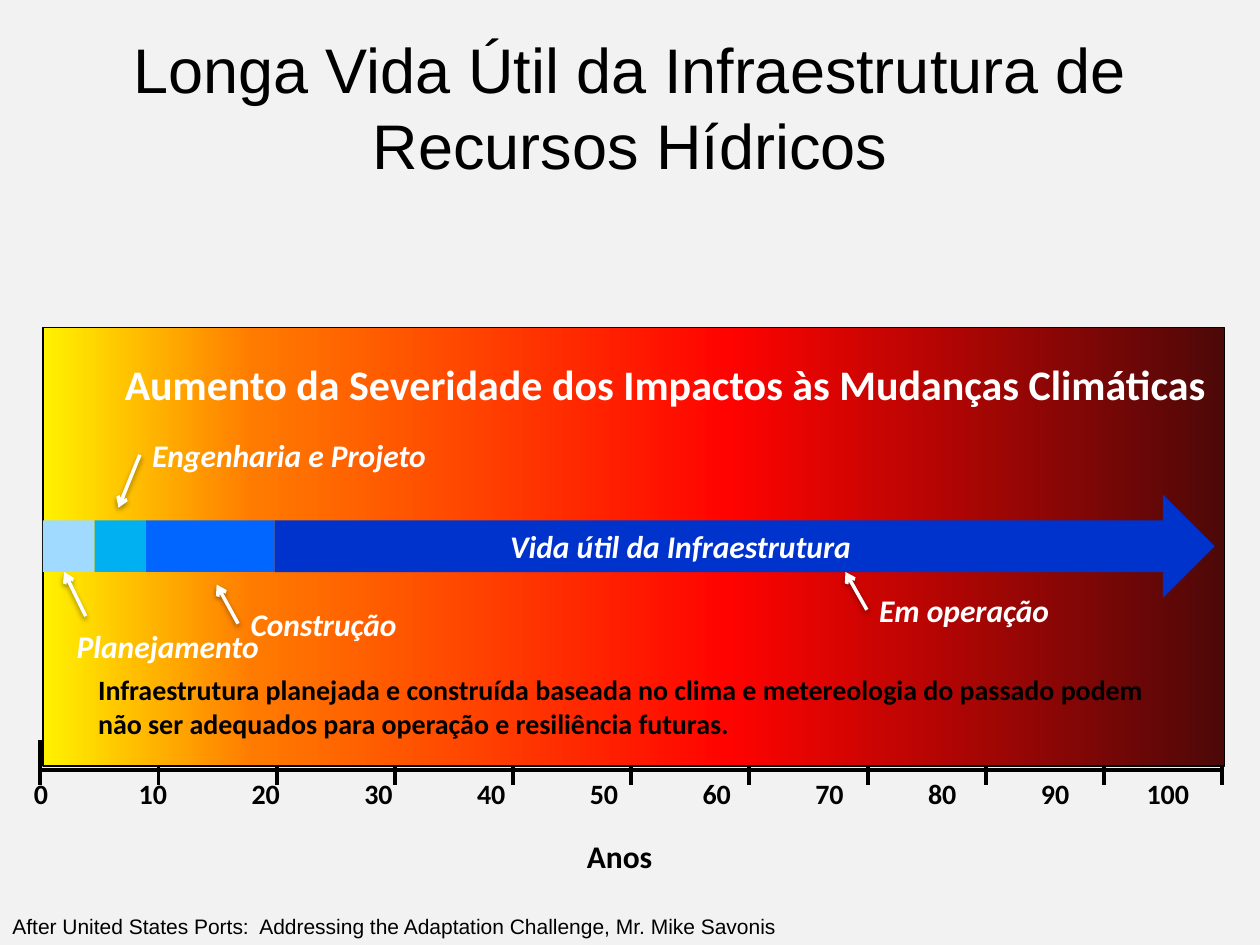
from lxml import etree
from pptx import Presentation
from pptx import util as u
from pptx.dml.color import RGBColor
from pptx.enum import shapes, text
from pptx.oxml.ns import qn

COLORS = {"page": "F2F2F2", "ink": "000000", "light": "FFFFFF",
          "planning": "A0DAFE", "design": "00B0F0", "building": "0066FF", "service": "0033CC"}
SEVERITY = [(0, "FFF200"), (18, "FF7A00"), (58, "FF0300"), (100, "4D0808")]

TITLE = "Longa Vida Útil da Infraestrutura de Recursos Hídricos"
SOURCE = "After United States Ports:  Addressing the Adaptation Challenge, Mr. Mike Savonis"
HEADING = "Aumento da Severidade dos Impactos às Mudanças Climáticas"
WARNING = ("Infraestrutura planejada e construída baseada no clima e metereologia do passado "
           "podem não ser adequados para operação e resiliência futuras.")
YEARS = range(0, 101, 10)

# Axis and bar geometry, in inches
AXIS_LEFT, AXIS_RIGHT, AXIS_Y = 0.32, 9.7, 6.11
TICK_TOP, TICK_BOTTOM = 5.87, 6.23
LABEL_STEP = 0.895
BAR_LEFT, BAR_TOP, BAR_HEIGHT = 0.34, 4.13, 0.41
PHASES = [("planning", 0.41), ("design", 0.41), ("building", 1.02)]
SERVICE_WIDTH = 7.46

# label, box (left, top, width), arrow start (None: middle of the label's left side), arrow end
CALLOUTS = [
    ("Planejamento", (0.51, 4.93, 1.72), (0.68, 4.89), (0.51, 4.54)),
    ("Engenharia e Projeto", (1.11, 3.41, 2.46), None, (0.94, 4.03)),
    ("Construção", (1.89, 4.75, 1.44), None, (1.72, 4.64)),
    ("Em operação", (6.88, 4.64, 1.63), None, (6.71, 4.54)),
]


def rgb(name):
    return RGBColor.from_string(COLORS[name])


def inches(*values):
    return [u.Inches(value) for value in values]


def style(para, size, color, face="Calibri", bold=True, italic=False):
    font = para.font
    font.name, font.size, font.bold, font.italic = face, u.Pt(size), bold, italic
    font.color.rgb = rgb(color)


def add_text(page, words, place, size, color, align=text.PP_ALIGN.LEFT, **look):
    box = page.shapes.add_textbox(*inches(*place))
    box.text_frame.word_wrap = True
    para = box.text_frame.paragraphs[0]
    para.text, para.alignment = words, align
    style(para, size, color, **look)
    return box


def add_block(page, kind, place, color=None):
    block = page.shapes.add_shape(kind, *inches(*place))
    block.shadow.inherit = False
    block.line.fill.background()
    if color:
        block.fill.solid()
        block.fill.fore_color.rgb = rgb(color)
    return block


def add_line(page, start, end, color, width):
    """Add a straight line; return it with its empty effect list."""
    line = page.shapes.add_connector(shapes.MSO_CONNECTOR.STRAIGHT, *inches(*start, *end))
    line.line.color.rgb = rgb(color)
    line.line.width = u.Pt(width)
    effects = etree.SubElement(line._element.spPr, qn("a:effectLst"))
    return line, effects


def add_pointer(page, start, end):
    """Add a white arrow with a soft shadow below it."""
    line, effects = add_line(page, start, end, "light", 2)
    etree.SubElement(line.line._get_or_add_ln(), qn("a:tailEnd"), type="arrow")
    shadow = etree.SubElement(effects, qn("a:outerShdw"), blurRad=str(u.Pt(3.1)),
                              dist=str(u.Pt(1.6)), dir="5400000", rotWithShape="0")
    shade = etree.SubElement(shadow, qn("a:srgbClr"), val=COLORS["ink"])
    etree.SubElement(shade, qn("a:alpha"), val="38000")
    return line


def add_axis(page):
    add_line(page, (AXIS_LEFT, AXIS_Y), (AXIS_RIGHT, AXIS_Y), "ink", 2.25)
    step = (AXIS_RIGHT - AXIS_LEFT) / (len(YEARS) - 1)
    for index in range(len(YEARS)):
        x = AXIS_LEFT + index * step
        add_line(page, (x, TICK_TOP), (x, TICK_BOTTOM), "ink", 2.25)

    box = add_text(page, "\t".join(map(str, YEARS)), (0.17, AXIS_Y, 9.83, 0.45), 16, "ink")
    props = box.text_frame.paragraphs[0]._p.get_or_add_pPr()
    tabs = etree.Element(qn("a:tabLst"))
    props.insert(0, tabs)
    for index in range(1, len(YEARS)):
        etree.SubElement(tabs, qn("a:tab"), pos=str(u.Inches(0.05 + index * LABEL_STEP)), algn="ctr")
    add_text(page, "Anos", (4.56, 6.59, 0.8, 0.4), 18, "ink")


def add_severity_panel(page):
    panel = add_block(page, shapes.MSO_SHAPE.RECTANGLE, (BAR_LEFT, 2.6, 9.38, 3.48))
    panel.line.color.rgb = rgb("ink")
    panel.line.width = u.Pt(0.75)
    panel.fill.gradient()
    panel.fill.gradient_angle = 0
    stops = panel._element.spPr.find(qn("a:gradFill")).find(qn("a:gsLst"))
    for stop in list(stops):
        stops.remove(stop)
    for share, color in SEVERITY:
        stop = etree.SubElement(stops, qn("a:gs"), pos=str(share * 1000))
        etree.SubElement(stop, qn("a:srgbClr"), val=color)


def add_life_bar(page):
    left = BAR_LEFT
    for color, width in PHASES:
        add_block(page, shapes.MSO_SHAPE.RECTANGLE, (left, BAR_TOP, width, BAR_HEIGHT), color)
        left += width
    add_block(page, shapes.MSO_SHAPE.RIGHT_ARROW,
              (left, BAR_TOP - BAR_HEIGHT / 2, SERVICE_WIDTH, 2 * BAR_HEIGHT), "service")


def add_callouts(page):
    for words, (left, top, width), start, end in CALLOUTS:
        label = add_text(page, words, (left, top, width, 0.4), 18, "light", italic=True)
        pointer = add_pointer(page, start or (left, top + 0.2), end)
        if start is None:
            pointer.begin_connect(label, 1)


def main():
    deck = Presentation()
    deck.slide_width, deck.slide_height = inches(10, 7.5)
    page = deck.slides.add_slide(deck.slide_layouts[5])
    page.background.fill.solid()
    page.background.fill.fore_color.rgb = rgb("page")

    title = page.shapes.title
    title.left, title.top, title.width, title.height = inches(0, 0.22, 10, 1.25)
    title.text_frame.text = TITLE
    title.text_frame.vertical_anchor = text.MSO_ANCHOR.MIDDLE
    heading = title.text_frame.paragraphs[0]
    heading.alignment = text.PP_ALIGN.CENTER
    style(heading, 36, "ink", face="Arial", bold=False)

    add_axis(page)
    add_severity_panel(page)
    add_life_bar(page)
    add_text(page, HEADING, (0.51, 2.8, 9.16, 0.5), 24, "light", text.PP_ALIGN.RIGHT)
    add_text(page, WARNING, (0.68, 5.29, 8.69, 0.64), 16, "ink")
    add_text(page, "Vida útil da Infraestrutura", (3.95, BAR_TOP, 3, 0.4), 18, "light", italic=True)
    add_callouts(page)
    add_text(page, SOURCE, (0, 7.2, 9.19, 0.3), 12, "ink", face="Arial", bold=False)
    deck.save("out.pptx")


if __name__ == "__main__":
    main()
